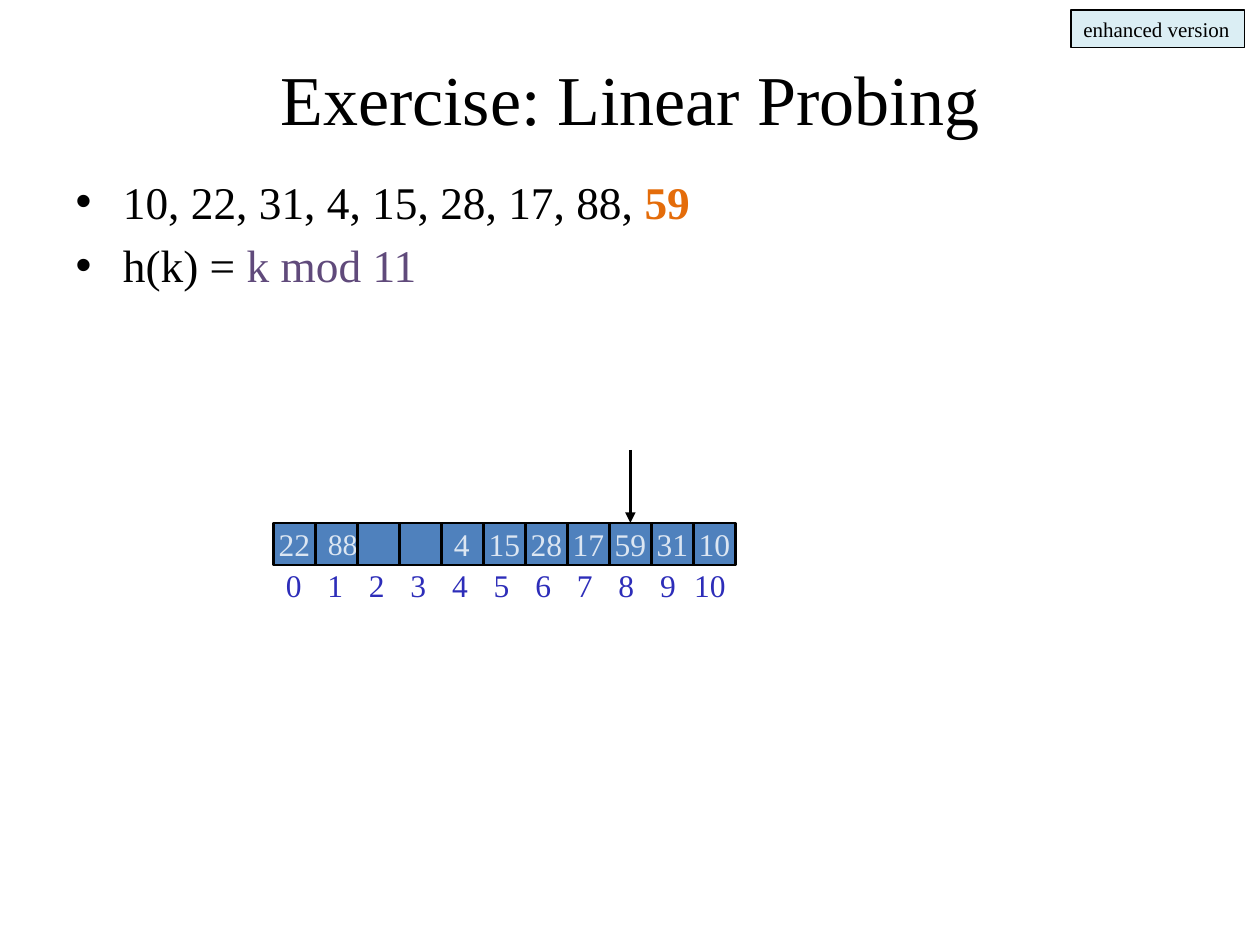
from pptx import Presentation
from pptx import util as u
from pptx.dml.color import RGBColor
from pptx.enum import shapes, text
from pptx.oxml.ns import qn
from lxml import etree

BLACK = RGBColor(0x00, 0x00, 0x00)
ORANGE = RGBColor(0xE4, 0x6C, 0x0A)
PURPLE = RGBColor(0x60, 0x4A, 0x7B)
BLUE = RGBColor(0x4F, 0x81, 0xBD)
PALE_BLUE = RGBColor(0xDC, 0xE6, 0xF2)
INDEX_BLUE = RGBColor(0x2D, 0x2D, 0xB9)
TAG_FILL = RGBColor(0xDB, 0xEE, 0xF4)
LEFT, CENTER = text.PP_ALIGN.LEFT, text.PP_ALIGN.CENTER
TOP, MIDDLE = text.MSO_ANCHOR.TOP, text.MSO_ANCHOR.MIDDLE
GROW = text.MSO_AUTO_SIZE.SHAPE_TO_FIT_TEXT


class SlideBuilder:
    """Draws styled elements on the current slide."""

    font = "Times New Roman"

    def __init__(self, slide):
        self.slide = slide

    def style(self, run, size, color, bold=False):
        run.font.name = self.font
        run.font.size = u.Pt(size)
        run.font.color.rgb = color
        run.font.bold = bold

    def place(self, shape, left, top, width, height):
        shape.left, shape.top = u.Inches(left), u.Inches(top)
        shape.width, shape.height = u.Inches(width), u.Inches(height)

    def set_text(self, frame, words, size, color, align, anchor):
        frame.text = words
        frame.word_wrap = False
        frame.vertical_anchor = anchor
        paragraph = frame.paragraphs[0]
        paragraph.alignment = align
        for run in paragraph.runs:
            self.style(run, size, color)

    def title(self, words, box):
        shape = self.slide.shapes.title
        self.place(shape, *box)
        shape.text_frame.text = words
        shape.text_frame.auto_size = text.MSO_AUTO_SIZE.NONE
        self.style(shape.text_frame.paragraphs[0].runs[0], 40, BLACK)

    def bullets(self, lines, box, size):
        shape = self.slide.placeholders[1]
        self.place(shape, *box)
        frame = shape.text_frame
        frame.text = "\n".join("" for _ in lines)
        frame.auto_size = text.MSO_AUTO_SIZE.NONE
        for paragraph, parts in zip(frame.paragraphs, lines):
            for words, color, bold in parts:
                run = paragraph.add_run()
                run.text = words
                self.style(run, size, color, bold)

    def box(self, words, box, fill, line_width, size, color, align, anchor):
        shape = self.slide.shapes.add_shape(
            shapes.MSO_SHAPE.RECTANGLE, *map(u.Inches, box))
        shape.shadow.inherit = False
        shape.fill.solid()
        shape.fill.fore_color.rgb = fill
        shape.line.color.rgb = BLACK
        shape.line.width = u.Pt(line_width)
        if words:
            self.set_text(shape.text_frame, words, size, color, align, anchor)
        return shape

    def label(self, words, box, size, color):
        shape = self.slide.shapes.add_textbox(*map(u.Inches, box))
        self.set_text(shape.text_frame, words, size, color, LEFT, TOP)
        shape.text_frame.auto_size = GROW

    def arrow_down_to(self, target, length):
        middle = target.left + target.width // 2
        connector = self.slide.shapes.add_connector(
            shapes.MSO_CONNECTOR.STRAIGHT,
            middle, target.top - u.Inches(length), middle, target.top)
        connector.end_connect(target, 0)
        connector.line.color.rgb = BLACK
        connector.line.width = u.Pt(1.5)
        properties = connector._element.spPr
        etree.SubElement(properties.find(qn("a:ln")), qn("a:tailEnd"), type="triangle")
        etree.SubElement(properties, qn("a:effectLst"))


def main():
    presentation = Presentation()
    presentation.slide_width, presentation.slide_height = u.Inches(10), u.Inches(7.5)
    builder = SlideBuilder(
        presentation.slides.add_slide(presentation.slide_layouts[1]))

    builder.title("Exercise: Linear Probing", (0.5, 0.3, 9, 0.95))
    builder.bullets([
        [("10, 22, 31, 4, 15, 28, 17, 88, ", BLACK, False), ("59", ORANGE, True)],
        [("h(k) = ", BLACK, False), ("k mod 11", PURPLE, False)],
    ], (0.5, 1.33, 9, 0.92), 25.9)

    tag = builder.box("enhanced version", (8.5, 0.08, 1.38, 0.3), TAG_FILL, 0.75,
                      12, BLACK, LEFT, TOP)
    tag.text_frame.auto_size = GROW

    table_left, cell = 2.17, 1 / 3
    keys = ["22", "88", "", "", "4", "15", "28", "17", "59", "31", "10"]
    slots = []
    for index, key in enumerate(keys):
        align = LEFT if key in ("88", "4") else CENTER
        size = 17 if key == "88" else 18
        slots.append(builder.box(
            key, (table_left + index * cell, 4.15, cell, cell), BLUE, 1.5,
            size, PALE_BLUE, align, MIDDLE))

    for index in range(10):
        builder.label(str(index), (table_left + index * 0.33, 4.44, 0.33, 0.4),
                      18, INDEX_BLUE)
    builder.label("10", (5.41, 4.44, 0.45, 0.4), 18, INDEX_BLUE)

    builder.arrow_down_to(slots[keys.index("59")], 0.58)
    presentation.save("out.pptx")


if __name__ == "__main__":
    main()
